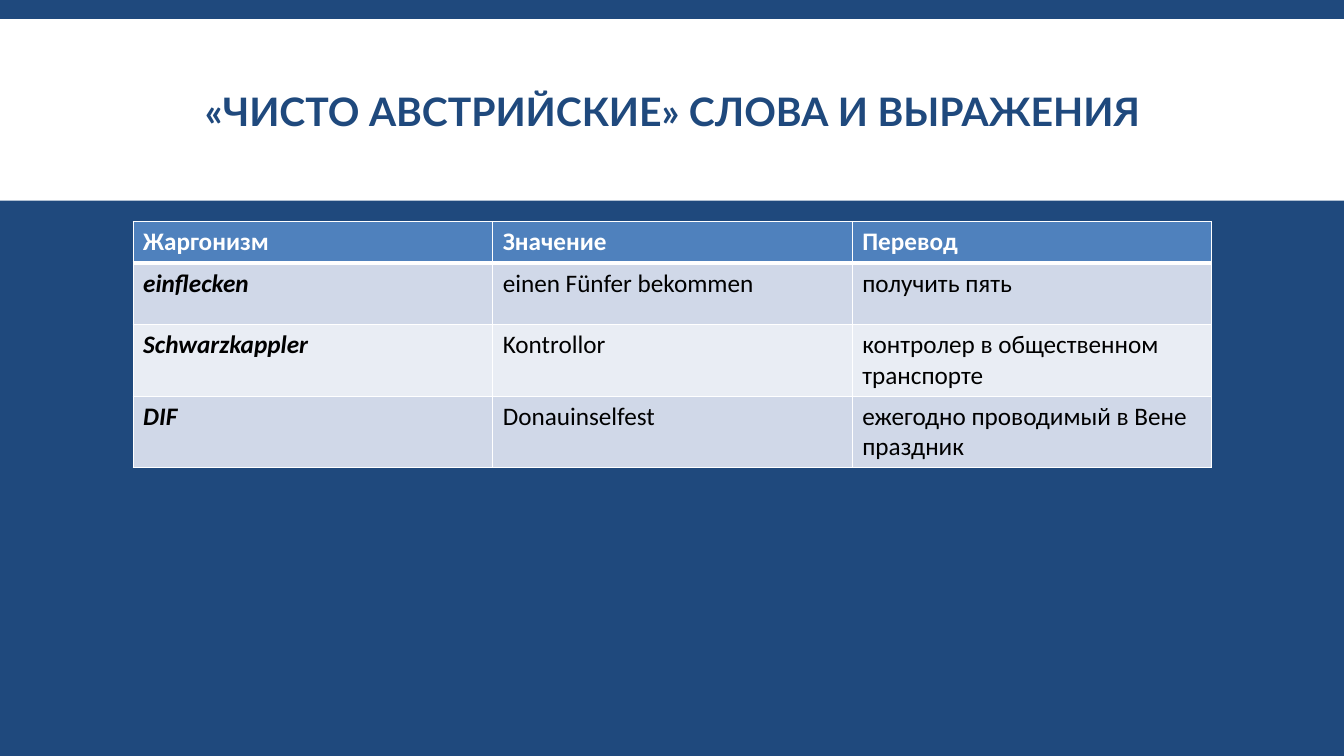
from lxml.etree import SubElement
from pptx import Presentation
from pptx.dml.color import RGBColor
from pptx.enum.shapes import MSO_SHAPE as Preset
from pptx.enum.text import MSO_ANCHOR as Anchor, MSO_AUTO_SIZE as AutoSize, PP_ALIGN as Align
from pptx.oxml.ns import qn
from pptx.util import Inches, Pt

COLORS = {
    "navy": "1F497D",
    "header": "4F81BD",
    "odd": "D0D8E8",
    "even": "E9EDF4",
    "white": "FFFFFF",
    "black": "000000",
}
TITLE = "«ЧИСТО АВСТРИЙСКИЕ» СЛОВА И ВЫРАЖЕНИЯ"
GLOSSARY = [
    ("Жаргонизм", "Значение", "Перевод"),
    ("einflecken", "einen Fünfer bekommen", "получить пять"),
    ("Schwarzkappler", "Kontrollor", "контролер в общественном транспорте"),
    ("DIF", "Donauinselfest", "ежегодно проводимый в Вене праздник"),
]
ROW_HEIGHTS = [0.41, 0.61, 0.41, 0.41]


def color(name):
    return RGBColor.from_string(COLORS[name])


def paint(fill, name):
    fill.solid()
    fill.fore_color.rgb = color(name)


def style_font(span, face, size, name, bold, italic=False):
    font = span.font
    font.name, font.size = face, Pt(size)
    font.bold, font.italic = bold, italic
    font.color.rgb = color(name)


def add_heading(page, left, top, width, height):
    band = page.shapes.add_shape(
        Preset.RECTANGLE, Inches(left), Inches(top), Inches(width), Inches(height))
    band.shadow.inherit = False
    paint(band.fill, "white")
    band.line.fill.background()

    title = page.shapes.title
    title.element.addprevious(band.element)
    title.left, title.top = Inches(left + 1.32), Inches(top + 0.12)
    title.width, title.height = Inches(width - 2.63), Inches(height - 0.15)
    frame = title.text_frame
    frame.text = TITLE
    frame.word_wrap = True
    frame.auto_size = AutoSize.NONE
    frame.vertical_anchor = Anchor.MIDDLE
    para = frame.paragraphs[0]
    para.alignment = Align.CENTER
    para.line_spacing = 0.85
    style_font(para.runs[0], "Lato", 28, "navy", True)


def add_borders(cell, bottom_width):
    properties = cell._tc.get_or_add_tcPr()
    for side, width in (("L", 1), ("R", 1), ("T", 1), ("B", bottom_width)):
        line = SubElement(properties, qn(f"a:ln{side}"), w=str(Pt(width)))
        fill = SubElement(line, qn("a:solidFill"))
        SubElement(fill, qn("a:srgbClr"), val=COLORS["white"])


def add_glossary(page, left, top, width, height):
    frame = page.shapes.add_table(
        len(GLOSSARY), len(GLOSSARY[0]),
        Inches(left), Inches(top), Inches(width), Inches(height))
    table = frame.table
    for row, row_height in zip(table.rows, ROW_HEIGHTS):
        row.height = Inches(row_height)
    frame.height = Inches(height)

    for row_index, words in enumerate(GLOSSARY):
        is_header = row_index == 0
        fill_name = "header" if is_header else "odd" if row_index % 2 else "even"
        for column_index, word in enumerate(words):
            cell = table.cell(row_index, column_index)
            is_term = column_index == 0 and not is_header
            add_borders(cell, 3 if is_header else 1)
            paint(cell.fill, fill_name)
            cell.text_frame.text = word
            style_font(cell.text_frame.paragraphs[0].runs[0], "Calibri", 18,
                       "white" if is_header else "black",
                       is_header or is_term, is_term)


def main():
    deck = Presentation()
    deck.slide_width, deck.slide_height = Inches(13.33), Inches(7.5)
    page = deck.slides.add_slide(deck.slide_layouts[5])
    paint(page.background.fill, "navy")
    add_heading(page, 0, 0.19, 13.33, 1.8)
    add_glossary(page, 1.32, 2.2, 10.7, 2.42)
    deck.save("out.pptx")


if __name__ == "__main__":
    main()
